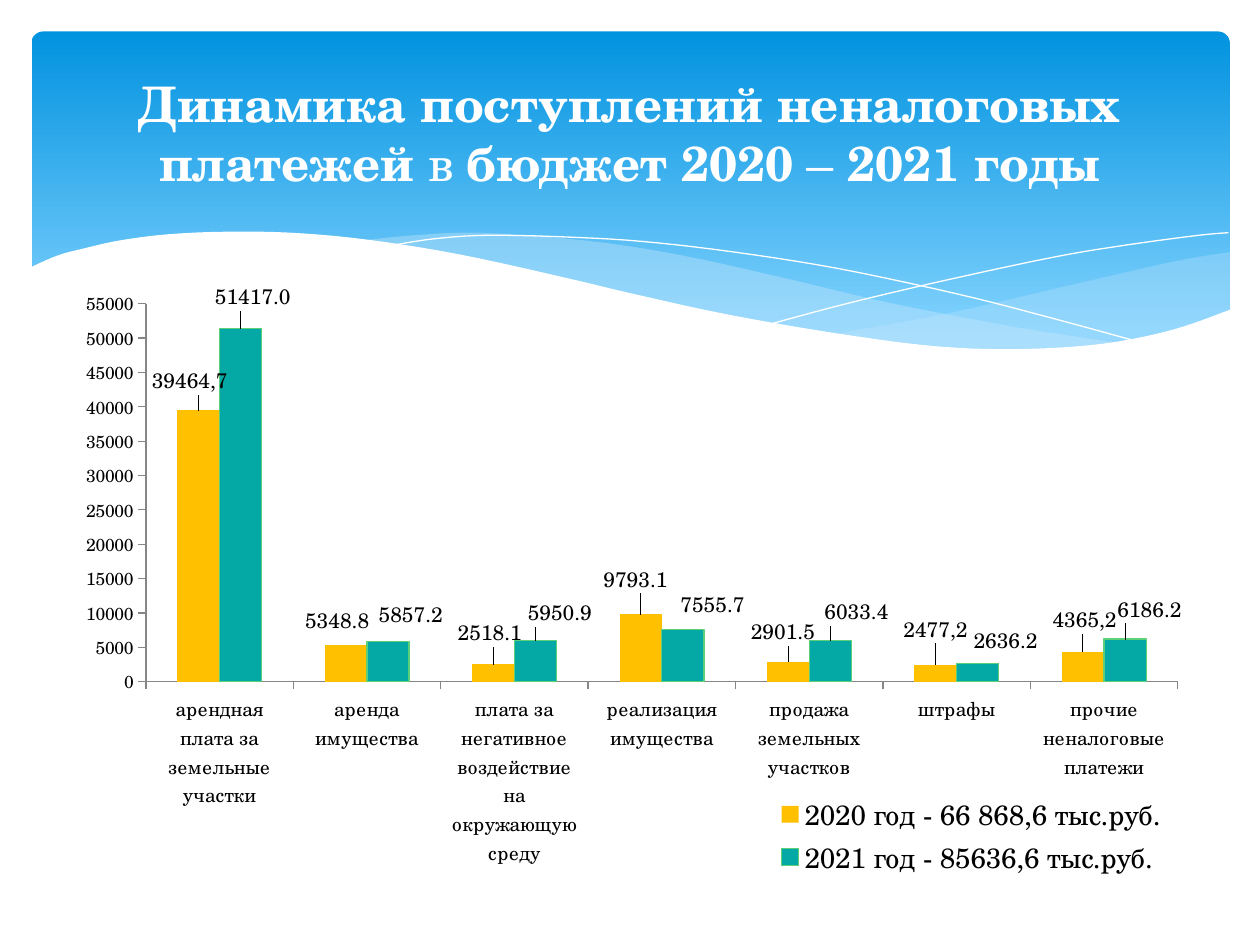
from lxml.etree import SubElement, Element
from pptx import Presentation
from pptx.chart.data import CategoryChartData
from pptx.dml.color import RGBColor
from pptx.enum.chart import XL_CHART_TYPE as ChartType, XL_LEGEND_POSITION as LegendPos
from pptx.enum.chart import XL_LABEL_POSITION as LabelPos, XL_TICK_MARK as Tick
from pptx.enum.shapes import MSO_SHAPE as Shape
from pptx.enum.text import MSO_ANCHOR as Anchor, PP_ALIGN as Align
from pptx.oxml.ns import qn
from pptx.util import Pt

FONT = "TeX Gyre Schola"
TITLE = [("Динамика поступлений неналоговых платежей", True), (" в ", False),
         ("бюджет 2020", True), (" – ", False), ("2021 годы", True)]
CATEGORIES = ["арендная плата за земельные участки", "аренда имущества",
              "плата за негативное воздействие на окружающую среду",
              "реализация имущества", "продажа земельных участков",
              "штрафы", "прочие неналоговые платежи"]
SERIES = [
    dict(name="2020 год - 66 868,6 тыс.руб.", color="FFC000", line=None,
         values=[39464.7, 5348.8, 2518.1, 9793.1, 2901.5, 2477.2, 4365.2],
         texts={0: "39464,7", 5: "2477,2", 6: "4365,2"},
         shifts=[(-5, -6), (-5, -3), (-2, -7), (-3, -9), (-3, -6), (0, -9), (1, -7)]),
    dict(name="2021 год - 85636,6 тыс.руб.", color="04A8A4", line="5BD078",
         values=[51417, 5857.2, 5950.9, 7555.7, 6033.4, 2636.2, 6186.2],
         texts={},
         shifts=[(7, -7), (13, -4), (14, -5), (17, -3), (15, -5), (16, -2), (14, -6)]),
]
CHART_BOX = (36.7, 157, 648, 345.6)
PLOT = (0.072, 0.048, 0.91, 0.625)
LEGEND = (0.62, 0.855, 0.36, 0.145)

RIGHT_BAND = [
    [(703, 144), (673, 149), (620, 161), (542, 179), (476, 191)],
    [(476, 191), (518, 196), (554, 199), (586, 200), (628, 197), (663, 191), (703, 178)],
]
LONG_BAND = [
    [(643, 196.5), (581, 187), (508, 173), (453, 160), (390, 146), (335, 137.5),
     (274, 133), (236, 134.5), (206, 137.5)],
    [(206, 137.5), (261, 146), (323, 160), (382, 173), (445, 186), (500, 194.5),
     (548, 199.5), (589, 200), (617, 199.5), (643, 196.5)],
]
FALLING_LINE = [[(222.5, 140.5), (248, 136.5), (279, 134.5), (324, 135.5), (367, 138),
                 (419, 144), (479, 153.5), (547, 168), (598, 181), (653, 196)]]
RISING_LINE = [[(441, 185), (484, 173.5), (539, 160.5), (602, 147), (644, 140),
                (685, 134.5), (702, 133)]]
WHITE_WAVE = [
    [(703, 177), (670, 188.5), (630, 196.5), (583, 199.5), (536, 198), (481, 191),
     (417, 180), (362, 168), (322, 158.5), (263, 145.5), (210, 137), (166, 133),
     (127, 132.5), (95, 134), (68, 137.5), (48, 142), (33, 146), (17, 153)],
    [(17, 237), (703, 237)],
]


def rgb(value):
    return RGBColor.from_string(value)


def style(font, size, color="000000", bold=False):
    font.name, font.size, font.bold = FONT, Pt(size), bold
    font.color.rgb = rgb(color)


def smooth(points, steps=5):
    if len(points) < 3:
        return points
    ends = [points[0], *points, points[-1]]
    curve = [points[0]]
    for a, b, c, d in zip(ends, ends[1:], ends[2:], ends[3:]):
        for t in (i / steps for i in range(1, steps + 1)):
            curve.append(tuple(
                (2 * q + (r - p) * t + (2 * p - 5 * q + 4 * r - s) * t ** 2
                 + (3 * q - p - 3 * r + s) * t ** 3) / 2
                for p, q, r, s in zip(a, b, c, d)))
    return curve


def add_wave(slide, edges, fill=None, opacity=100):
    points = [(Pt(x), Pt(y)) for edge in edges for x, y in smooth(edge)]
    builder = slide.shapes.build_freeform(*points[0])
    builder.add_line_segments(points[1:], close=fill is not None)
    sp = builder.convert_to_shape()
    sp.shadow.inherit = False
    if fill is None:
        sp.fill.background()
        sp.line.color.rgb = rgb("FFFFFF")
        sp.line.width = Pt(0)
        return
    sp.fill.solid()
    sp.fill.fore_color.rgb = rgb(fill)
    sp.line.fill.background()
    if opacity < 100:
        color = sp.fill._xPr.find(".//" + qn("a:srgbClr"))
        SubElement(color, qn("a:alpha"), val=str(opacity * 1000))


def make_layout(inner=False, **values):
    layout = Element(qn("c:layout"))
    manual = SubElement(layout, qn("c:manualLayout"))
    if inner:
        SubElement(manual, qn("c:layoutTarget"), val="inner")
    if "w" in values:
        for key in ("xMode", "yMode"):
            SubElement(manual, qn("c:" + key), val="edge")
    for key, value in values.items():
        SubElement(manual, qn("c:" + key), val=f"{value:.4f}")
    return layout


def set_layout(parent, layout, after):
    for old in parent.findall(qn("c:layout")):
        parent.remove(old)
    if after is None:
        parent.insert(0, layout)
    else:
        parent.find(qn(after)).addnext(layout)


def label_point(series, index, text, shift):
    label = series.points[index].data_label
    if text:
        r = label.text_frame.paragraphs[0].add_run()
        r.text = text
        style(r.font, 12)
    else:
        style(label.font, 12)
    label.position = LabelPos.OUTSIDE_END
    node = series._element.xpath(f"c:dLbls/c:dLbl[c:idx/@val='{index}']")[0]
    layout = make_layout(x=shift[0] / CHART_BOX[2], y=shift[1] / CHART_BOX[3])
    set_layout(node, layout, "c:idx")
    if not text:
        layout.addnext(Element(qn("c:numFmt"), formatCode="0.0", sourceLinked="0"))


def add_title(slide):
    title = slide.shapes.title
    title.left, title.top, title.width, title.height = Pt(36), Pt(26.6), Pt(648), Pt(98.6)
    slide.shapes._spTree.append(title._element)
    tf = title.text_frame
    tf.word_wrap, tf.vertical_anchor = True, Anchor.MIDDLE
    p = tf.paragraphs[0]
    p.alignment = Align.CENTER
    for text, bold in TITLE:
        r = p.add_run()
        r.text = text
        style(r.font, 28, "FFFFFF", bold)
        effects = Element(qn("a:effectLst"))
        shadow = SubElement(effects, qn("a:outerShdw"), blurRad="38100", dist="38100", dir="2700000")
        color = SubElement(shadow, qn("a:srgbClr"), val="000000")
        SubElement(color, qn("a:alpha"), val="43000")
        r.font._element.find(qn("a:solidFill")).addnext(effects)


def add_income_chart(slide):
    data = CategoryChartData(number_format="0.0")
    data.categories = CATEGORIES
    for item in SERIES:
        data.add_series(item["name"], item["values"])
    chart = slide.shapes.add_chart(ChartType.COLUMN_CLUSTERED, *map(Pt, CHART_BOX), data).chart
    style(chart.font, 18)
    chart.font.name = "Cabin"
    chart.has_title = False
    plot = chart.plots[0]
    plot.gap_width, plot.overlap, plot.vary_by_categories = 150, 0, False
    set_layout(chart._chartSpace.chart.plotArea,
               make_layout(True, **dict(zip("xywh", PLOT))), None)

    for axis, size in ((chart.category_axis, 11), (chart.value_axis, 10)):
        style(axis.tick_labels.font, size)
        axis.has_major_gridlines = False
        axis.major_tick_mark, axis.minor_tick_mark = Tick.OUTSIDE, Tick.NONE
        axis.format.line.color.rgb = rgb("868686")
    axis = chart.value_axis
    axis.minimum_scale, axis.maximum_scale, axis.major_unit = 0, 55000, 5000
    axis.tick_labels.number_format = "0"
    axis.tick_labels.number_format_is_linked = False

    chart.has_legend = True
    legend = chart.legend
    legend.position, legend.include_in_layout = LegendPos.RIGHT, False
    style(legend.font, 16)
    set_layout(legend._element, make_layout(**dict(zip("xywh", LEGEND))), "c:legendPos")

    for series, item in zip(plot.series, SERIES):
        series.format.fill.solid()
        series.format.fill.fore_color.rgb = rgb(item["color"])
        if item["line"]:
            series.format.line.color.rgb = rgb(item["line"])
            series.format.line.width = Pt(0.75)
        labels = series.data_labels
        labels.show_value = True
        labels.number_format, labels.number_format_is_linked = "0.0", False
        style(labels.font, 12)
        for i, shift in enumerate(item["shifts"]):
            label_point(series, i, item["texts"].get(i), shift)


def main():
    prs = Presentation()
    prs.slide_width, prs.slide_height = Pt(720), Pt(540)
    slide = prs.slides.add_slide(prs.slide_layouts[5])
    banner = slide.shapes.add_shape(Shape.ROUNDED_RECTANGLE, Pt(18), Pt(18), Pt(684.7), Pt(194.4))
    banner.adjustments[0] = 0.034
    banner.shadow.inherit = False
    banner.line.fill.background()
    banner.fill.gradient()
    banner.fill.gradient_angle = 270
    for stop, color, place in zip(banner.fill.gradient_stops, ("0293E0", "83D3FE"), (0, 0.9)):
        stop.color.rgb, stop.position = rgb(color), place
    add_wave(slide, RIGHT_BAND, "C6E7FC", 29)
    add_wave(slide, LONG_BAND, "C6E7FC", 40)
    add_wave(slide, FALLING_LINE)
    add_wave(slide, RISING_LINE)
    add_wave(slide, WHITE_WAVE, "FFFFFF")
    add_title(slide)
    add_income_chart(slide)
    prs.save("out.pptx")


if __name__ == "__main__":
    main()
